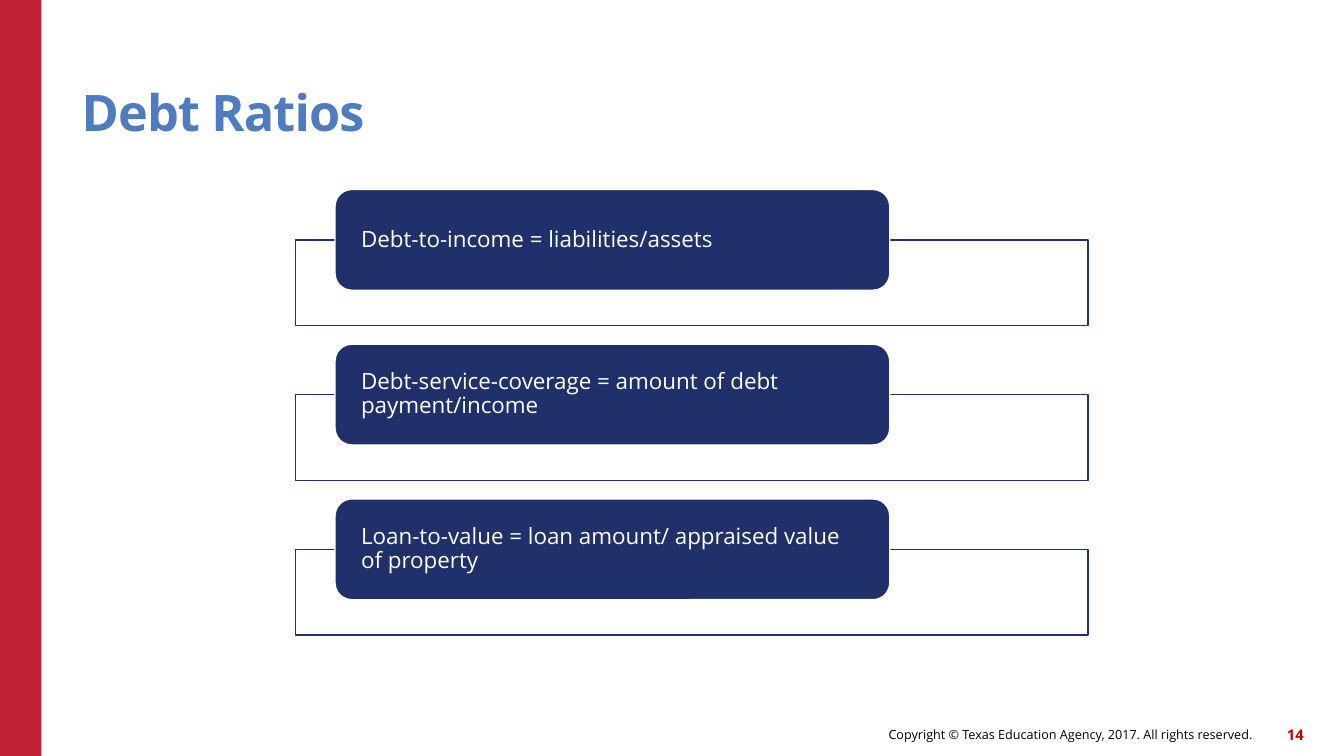
from lxml import etree
from pptx import Presentation
from pptx.dml.color import RGBColor
from pptx.enum.shapes import MSO_SHAPE
from pptx.enum.text import MSO_ANCHOR, MSO_AUTO_SIZE, PP_ALIGN
from pptx.oxml.ns import qn
from pptx.util import Inches, Pt

RECTANGLE, ROUNDED = MSO_SHAPE.RECTANGLE, MSO_SHAPE.ROUNDED_RECTANGLE
MIDDLE, BOTTOM = MSO_ANCHOR.MIDDLE, MSO_ANCHOR.BOTTOM
LEFT, RIGHT = PP_ALIGN.LEFT, PP_ALIGN.RIGHT
NO_AUTOFIT = MSO_AUTO_SIZE.NONE

FONT = "Open Sans"
COLORS = {
    "red": "C02033",
    "number": "C00000",
    "title": "4E7CBE",
    "navy": "20306A",
    "white": "FFFFFF",
    "black": "000000",
}
FORMATS = {
    "title": {"size": Pt(36), "bold": True},
    "ratio": {"size": Pt(16), "bold": False},
    "copyright": {"size": Pt(9), "bold": False},
    "number": {"size": Pt(10.5), "bold": True},
}
RATIOS = [
    "Debt-to-income = liabilities/assets",
    "Debt-service-coverage = amount of debt payment/income",
    "Loan-to-value = loan amount/ appraised value of property",
]


def color(name):
    """Return the named palette colour."""
    return RGBColor.from_string(COLORS[name])


def write_text(shape, text, style, color_name, align=LEFT, anchor=MIDDLE, side=0):
    """Fill a shape with one formatted paragraph and return the paragraph."""
    frame = shape.text_frame
    settings = {
        "word_wrap": True,
        "auto_size": NO_AUTOFIT,
        "vertical_anchor": anchor,
        "margin_left": Inches(side),
        "margin_right": Inches(side),
        "margin_top": 0,
        "margin_bottom": 0,
    }
    for name, value in settings.items():
        setattr(frame, name, value)
    paragraph = frame.paragraphs[0]
    paragraph.alignment = align
    run = paragraph.add_run()
    run.text = text
    run.font.name = FONT
    run.font.color.rgb = color(color_name)
    for name, value in FORMATS[style].items():
        setattr(run.font, name, value)
    return paragraph


def add_block(slide, kind, box, fill, line=None):
    """Add a flat filled shape in the box, outlined when a line colour is given."""
    shape = slide.shapes.add_shape(kind, *map(Inches, box))
    shape.shadow.inherit = False
    shape.fill.solid()
    shape.fill.fore_color.rgb = color(fill)
    if line:
        shape.line.color.rgb = color(line)
        shape.line.width = Pt(1)
    else:
        shape.line.fill.background()
    return shape


def add_title(slide, box, text):
    """Place and format the title placeholder in the box."""
    title = slide.shapes.title
    title.left, title.top, title.width, title.height = map(Inches, box)
    paragraph = write_text(title, text, "title", "title", anchor=BOTTOM)
    paragraph.line_spacing = 0.9
    paragraph.runs[0].font._element.set("spc", "-60")


def add_footer(slide, box, copyright_text, number):
    """Add the copyright line and the page number at the right of the box."""
    left, top, width, height = box
    number_width, gap = 0.42, -0.09
    number_left = left + width - number_width
    parts = [
        (left, number_left + gap - left, copyright_text, "copyright", "black"),
        (number_left, number_width, number, "number", "number"),
    ]
    for part_left, part_width, text, style, color_name in parts:
        part_box = map(Inches, (part_left, top, part_width, height))
        text_box = slide.shapes.add_textbox(*part_box)
        write_text(text_box, text, style, color_name, align=RIGHT)


def add_ratio(slide, box, text):
    """Add an outlined panel with a rounded label overlapping its top edge."""
    left, top, width, height = box
    label_height = 1
    panel_box = (left, top + label_height / 2, width, height - label_height / 2)
    panel = add_block(slide, RECTANGLE, panel_box, "white", "navy")
    fill_color = panel._element.spPr.find(qn("a:solidFill"))[0]
    etree.SubElement(fill_color, qn("a:alpha")).set("val", "90000")
    label_box = (left + 0.05 * width, top, 0.7 * width, label_height)
    label = add_block(slide, ROUNDED, label_box, "navy", "white")
    paragraph = write_text(label, text, "ratio", "white", side=0.21)
    paragraph.line_spacing = 0.9


def add_ratio_list(slide, box, ratios):
    """Stack the ratios evenly in the box."""
    left, top, width, height = box
    ratio_height = 1.35
    pitch = (height - ratio_height) / (len(ratios) - 1)
    for index, text in enumerate(ratios):
        add_ratio(slide, (left, top + index * pitch, width, ratio_height), text)


def main():
    """Build the debt ratios slide and save it."""
    presentation = Presentation()
    presentation.slide_width = Inches(13.33)
    presentation.slide_height = Inches(7.5)
    slide = presentation.slides.add_slide(presentation.slide_layouts[5])
    add_block(slide, RECTANGLE, (0, 0, 0.41, 7.5), "red")
    add_footer(
        slide,
        (6.14, 7.13, 6.79, 0.32),
        "Copyright © Texas Education Agency, 2017. All rights reserved.",
        "14",
    )
    add_title(slide, (0.81, 0.45, 11, 0.96), "Debt Ratios")
    add_ratio_list(slide, (2.93, 1.88, 7.86, 4.42), RATIOS)
    presentation.save("out.pptx")


if __name__ == "__main__":
    main()
